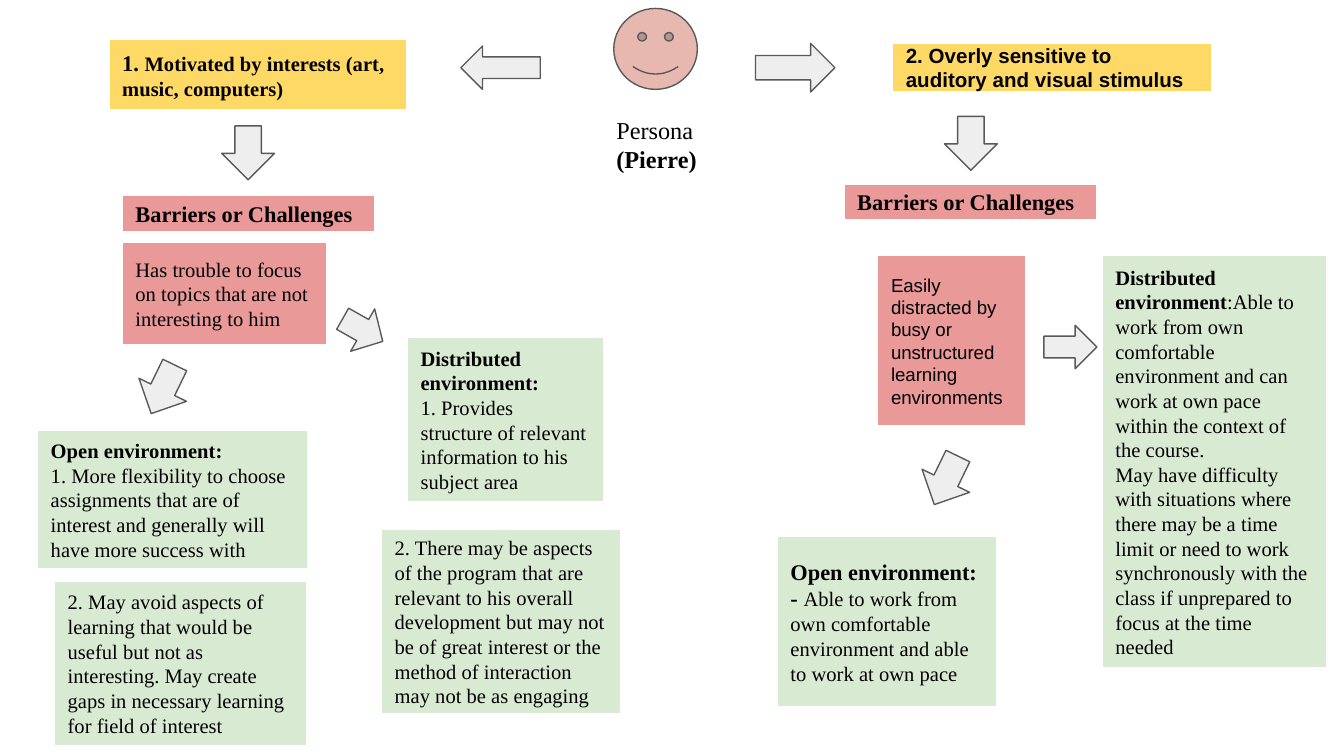
from pptx import Presentation
from pptx.dml.color import RGBColor
from pptx.enum import shapes, text
from pptx.util import Cm, Pt

YELLOW = RGBColor(0xFF, 0xD9, 0x66)
RED = RGBColor(0xEA, 0x99, 0x99)
GREEN = RGBColor(0xD9, 0xEA, 0xD3)
SKIN = RGBColor(0xE6, 0xB8, 0xAF)
GREY = RGBColor(0xEE, 0xEE, 0xEE)
DARK = RGBColor(0x59, 0x59, 0x59)
WHITE = RGBColor(0xFF, 0xFF, 0xFF)
BLACK = RGBColor(0, 0, 0)

SERIF, SANS = "Times New Roman", "Arial"
SHAPE = shapes.MSO_SHAPE
DOWN, LEFT, RIGHT = SHAPE.DOWN_ARROW, SHAPE.LEFT_ARROW, SHAPE.RIGHT_ARROW
DOWN_SIZE = (1, 1.02)


class PersonaMap:
    inset = Cm(0.25)
    line_width = Pt(0.75)

    def __init__(self, slide):
        self.slide = slide

    def figure(self, kind, place, fill, line=DARK, rotation=0):
        shape = self.slide.shapes.add_shape(kind, *map(Cm, place))
        shape.shadow.inherit = False
        shape.fill.solid()
        shape.fill.fore_color.rgb = fill
        shape.line.color.rgb = line
        shape.line.width = self.line_width
        shape.rotation = rotation
        return shape

    def arrow(self, kind, left, top, size=DOWN_SIZE, rotation=0):
        self.figure(kind, (left, top, *size), GREY, rotation=rotation)

    def box(self, place, fill, *paragraphs, size=11, font=SERIF):
        shape = self.figure(SHAPE.RECTANGLE, place, fill, WHITE)
        self.add_text(shape, paragraphs, size, font, text.MSO_ANCHOR.MIDDLE)

    def label(self, place, *paragraphs, size):
        shape = self.slide.shapes.add_textbox(*map(Cm, place))
        self.add_text(shape, paragraphs, size, SERIF, text.MSO_ANCHOR.TOP)

    def add_text(self, shape, paragraphs, size, font, anchor):
        """Each paragraph is a list of runs: (words, bold[, size])."""
        frame = shape.text_frame
        frame.word_wrap = True
        frame.vertical_anchor = anchor
        frame.margin_left = frame.margin_right = self.inset
        frame.margin_top = frame.margin_bottom = self.inset
        for index, runs in enumerate(paragraphs):
            paragraph = frame.add_paragraph() if index else frame.paragraphs[0]
            paragraph.alignment = text.PP_ALIGN.LEFT
            for words, bold, *own_size in runs:
                run = paragraph.add_run()
                run.text = words
                run.font.name = font
                run.font.size = Pt(own_size[0] if own_size else size)
                run.font.bold = bold
                run.font.color.rgb = BLACK

    def barriers_heading(self, left, top):
        self.box((left, top, 4.77, 0.68), RED,
                 [("Barriers or Challenges", True)], size=12)


def draw_persona(page):
    page.figure(SHAPE.SMILEY_FACE, (11.6, 0.16, 1.58, 1.53), SKIN)
    page.label((11.4, 1.93, 2.62, 1.93),
               [("Persona", False)], [("(Pierre)", True)], size=13)
    page.arrow(RIGHT, 14.28, 0.82, (1.5, 0.92))
    page.arrow(LEFT, 8.71, 0.87, (1.5, 0.82))


def draw_interests(page):
    page.box((2.06, 0.74, 5.63, 1.34), YELLOW,
             [("1. ", True, 12),
              ("Motivated by interests (art, music, computers)", True)])
    page.arrow(DOWN, 4.19, 2.38)
    page.barriers_heading(2.31, 3.7)
    page.box((2.31, 4.58, 3.86, 1.94), RED,
             [("Has trouble to focus on topics that are not "
               "interesting to him", False)])
    page.arrow(DOWN, 2.58, 6.85, rotation=25.9)
    page.arrow(RIGHT, 6.42, 5.78, (0.87, 0.92), 29.5)
    page.box((7.21, 10, 4.52, 3.5), GREEN,
             [("2. There may be aspects of the program that are relevant to "
               "his overall development but may not be of great interest or "
               "the method of interaction may not be as engaging", False)])
    page.box((7.7, 6.37, 3.71, 3.12), GREEN,
             [("Distributed environment:", True)],
             [("1. Provides structure of relevant information to his "
               "subject area", False)])
    page.box((0.71, 8.14, 5.1, 2.61), GREEN,
             [("Open environment:", True)],
             [("1. More flexibility to choose assignments that are of "
               "interest and generally will have more success with", False)])
    page.box((1.03, 10.98, 4.77, 3.12), GREEN,
             [("2. May avoid aspects of learning that would be useful but "
               "not as interesting. May create gaps in necessary learning "
               "for field of interest", False)])


def draw_sensitivity(page):
    page.box((16.87, 0.82, 6.04, 0.91), YELLOW,
             [("2. Overly sensitive to auditory and visual stimulus", True)],
             font=SANS)
    page.arrow(DOWN, 17.85, 2.2)
    page.barriers_heading(15.95, 3.48)
    page.box((16.59, 4.83, 2.79, 3.22), RED,
             [("Easily distracted by busy or unstructured learning "
               "environments", False)], size=10, font=SANS)
    page.arrow(RIGHT, 19.73, 6.15, (1, 0.82))
    page.arrow(DOWN, 17.38, 8.57, rotation=25.9)
    page.box((20.83, 4.83, 4.24, 7.8), GREEN,
             [("Distributed environment", True),
              (":Able to work from own comfortable environment and can work "
               "at own pace within the context of the course.", False)],
             [("May have difficulty with situations where there may be a "
               "time limit or need to work synchronously with the class if "
               "unprepared to focus at the time needed", False)])
    page.box((14.69, 10.14, 4.14, 3.22), GREEN,
             [("Open environment:", True, 12)],
             [("- ", True, 12),
              ("Able to work from own comfortable environment and able to "
               "work at own pace", False)])


def main():
    presentation = Presentation()
    presentation.slide_width = Cm(25.4)
    presentation.slide_height = Cm(14.29)
    slide = presentation.slides.add_slide(presentation.slide_layouts[6])
    page = PersonaMap(slide)
    draw_persona(page)
    draw_interests(page)
    draw_sensitivity(page)
    presentation.save("out.pptx")


if __name__ == "__main__":
    main()
